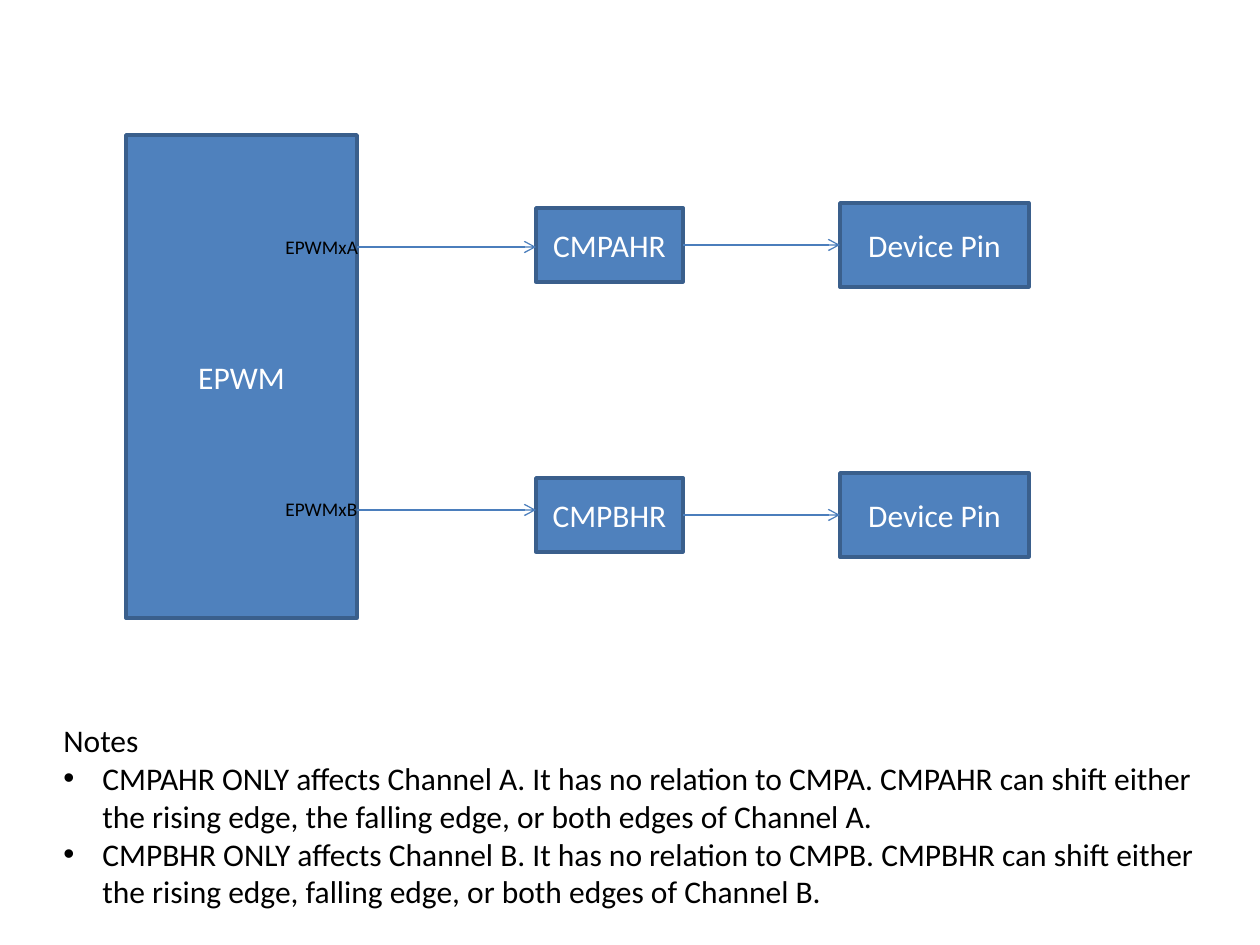
"""Build the EPWM channel diagram slide with its notes."""
from lxml.etree import SubElement
from pptx import Presentation
from pptx.dml.color import RGBColor
from pptx.enum.shapes import MSO_CONNECTOR as Connector, MSO_SHAPE as Shape
from pptx.enum.text import MSO_ANCHOR as Anchor, MSO_AUTO_SIZE as AutoSize, PP_ALIGN as Align
from pptx.oxml.ns import qn
from pptx.util import Emu, Pt

PX = 914400 / 126
INDENT = 39


def px(*lengths):
    return [Emu(round(length * PX)) for length in lengths]


def add_text(text, box, size=18, color="000000", fill=None, bulleted=False):
    if fill:
        shape = slide.shapes.add_shape(Shape.RECTANGLE, *px(*box))
        shape.shadow.inherit = False
        shape.fill.solid()
        shape.fill.fore_color.rgb = RGBColor.from_string(fill)
        shape.line.color.rgb = RGBColor.from_string("3A5F8C")
        shape.line.width = Pt(2)
    else:
        shape = slide.shapes.add_textbox(*px(*box))
        shape.text_frame.auto_size = AutoSize.SHAPE_TO_FIT_TEXT
    frame = shape.text_frame
    frame.word_wrap = True
    frame.vertical_anchor = Anchor.MIDDLE if fill else Anchor.TOP
    frame.text = text
    for index, paragraph in enumerate(frame.paragraphs):
        paragraph.alignment = Align.CENTER if fill else Align.LEFT
        font = paragraph.runs[0].font
        font.name, font.size = "Calibri", Pt(size)
        font.color.rgb = RGBColor.from_string(color)
        if bulleted and index:
            properties = paragraph._p.get_or_add_pPr()
            indent = px(INDENT)[0]
            properties.set("marL", str(indent))
            properties.set("indent", str(-indent))
            SubElement(properties, qn("a:buFont"), typeface="Arial")
            SubElement(properties, qn("a:buChar"), char="•")
    return shape


presentation = Presentation()
presentation.slide_width, presentation.slide_height = px(1260, 945)
slide = presentation.slides.add_slide(presentation.slide_layouts[6])

block = {"color": "FFFFFF", "fill": "4F81BD"}
add_text("EPWM", (126, 135, 231, 483), **block)

channels = [("EPWMxA", "CMPAHR", 245, 229, 247), ("EPWMxB", "CMPBHR", 515, 491, 510)]
for output, register, middle, label_top, output_y in channels:
    add_text(output, (273, label_top, 105, 37), size=11)
    register_box = add_text(register, (536, middle - 37, 147, 74), **block)
    pin_box = add_text("Device Pin", (840, middle - 42, 189, 84), **block)

    output_arrow = slide.shapes.add_connector(
        Connector.STRAIGHT, *px(357, output_y, 536, output_y))
    pin_arrow = slide.shapes.add_connector(
        Connector.STRAIGHT, *px(683, middle, 840, middle))
    pin_arrow.begin_connect(register_box, 3)
    pin_arrow.end_connect(pin_box, 1)
    for arrow in (output_arrow, pin_arrow):
        arrow.line.color.rgb = RGBColor.from_string("4B7EBC")
        arrow.line.width = Pt(0.75)
        SubElement(arrow.line._get_or_add_ln(), qn("a:tailEnd"), type="arrow")
        SubElement(arrow._element.spPr, qn("a:effectLst"))

notes = [
    "Notes",
    "CMPAHR ONLY affects Channel A. It has no relation to CMPA. CMPAHR can shift "
    "either the rising edge, the falling edge, or both edges of Channel A.",
    "CMPBHR ONLY affects Channel B. It has no relation to CMPB. CMPBHR can shift "
    "either the rising edge, falling edge, or both edges of Channel B.",
]
add_text("\n".join(notes), (51, 715, 1165, 204), bulleted=True)

presentation.save("out.pptx")
